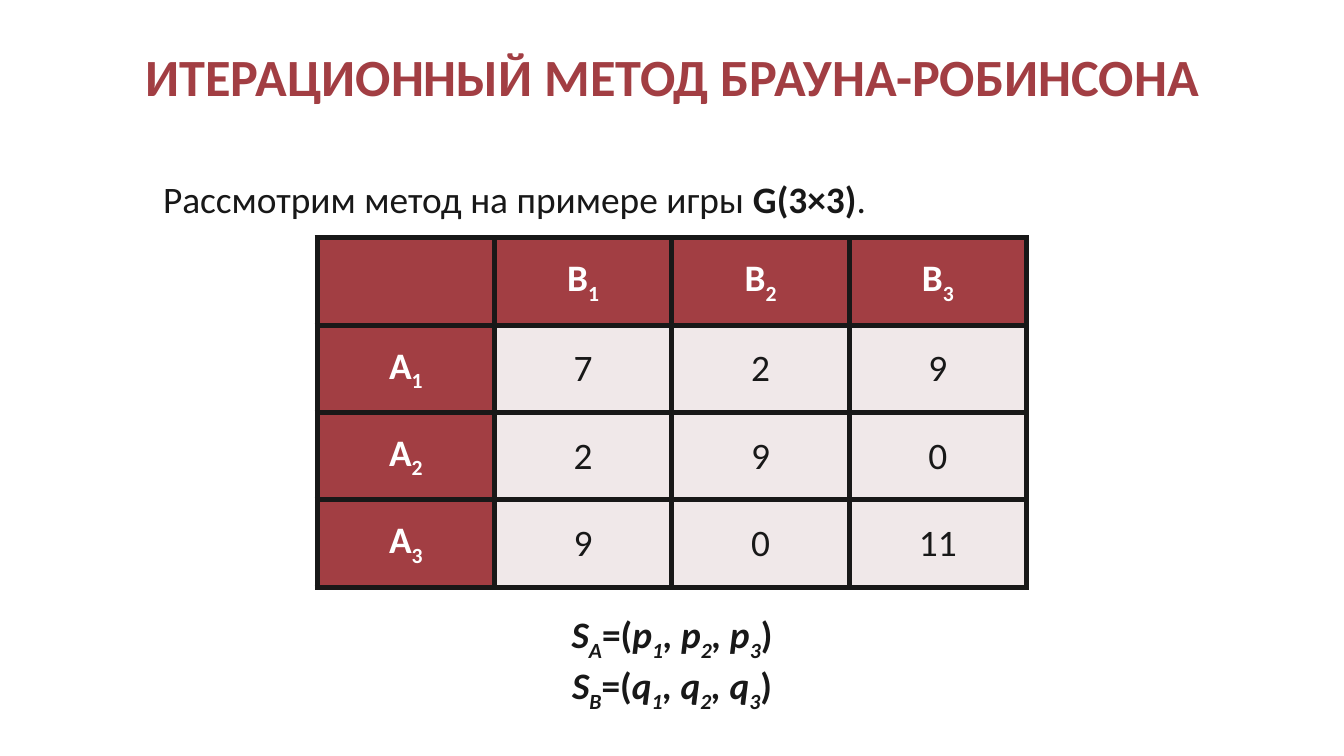
"""Build a slide on the Brown-Robinson iterative method."""
from lxml.etree import SubElement
from pptx import Presentation
from pptx.dml.color import RGBColor as Color
from pptx.enum.text import MSO_ANCHOR as Anchor, MSO_AUTO_SIZE as AutoSize, PP_ALIGN as Align
from pptx.oxml.ns import qn
from pptx.util import Inches, Pt

COLORS = {"accent": "A23E43", "dark": "181818", "light": "FFFFFF", "cell": "F0E8E9"}
WIDTH = 10
HEIGHT = WIDTH * 9 / 16
COLUMN, ROW = 1.32, 0.65
PAYOFFS = [[7, 2, 9], [2, 9, 0], [9, 0, 11]]


def color(name):
    """Return the named colour."""
    return Color.from_string(COLORS[name])


def place(shape, top, width, height):
    """Centre a shape on the slide at a given top."""
    shape.left, shape.top = Inches((WIDTH - width) / 2), Inches(top)
    shape.width, shape.height = Inches(width), Inches(height)


def write(paragraph, runs, size=20, tint="dark", align=Align.CENTER):
    """Write (text, style) runs; b is bold, i is italic, _ is subscript."""
    paragraph.alignment = align
    for text, style in runs:
        run = paragraph.add_run()
        run.text = text
        font = run.font
        font.name, font.size = "Calibri", Pt(size)
        font.bold, font.italic = "b" in style, "i" in style
        font.color.rgb = color(tint)
        if "_" in style:
            font._element.set("baseline", "-25000")


def add_text(slide, lines, top, width, height, anchor=Anchor.TOP, **style):
    """Add a centred text box with one paragraph per line."""
    box = slide.shapes.add_textbox(0, 0, 0, 0)
    place(box, top, width, height)
    frame = box.text_frame
    frame.word_wrap, frame.auto_size = True, AutoSize.SHAPE_TO_FIT_TEXT
    frame.vertical_anchor = anchor
    for index, runs in enumerate(lines):
        paragraph = frame.add_paragraph() if index else frame.paragraphs[0]
        write(paragraph, runs, **style)


def add_borders(cell, width=3):
    """Draw all four borders of a cell."""
    properties = cell._tc.get_or_add_tcPr()
    for side in ("lnL", "lnR", "lnT", "lnB"):
        line = SubElement(properties, qn(f"a:{side}"), w=str(Pt(width)))
        fill = SubElement(line, qn("a:solidFill"))
        SubElement(fill, qn("a:srgbClr"), val=COLORS["dark"])


def format_cell(cell, runs, header):
    """Fill, frame and write one cell."""
    add_borders(cell)
    cell.fill.solid()
    cell.fill.fore_color.rgb = color("accent" if header else "cell")
    cell.vertical_anchor = Anchor.MIDDLE
    cell.margin_left = cell.margin_right = Inches(0.07)
    cell.margin_top = cell.margin_bottom = 0
    write(cell.text_frame.paragraphs[0], runs, tint="light" if header else "dark")


def add_payoff_table(slide, payoffs, top):
    """Add the payoff matrix with strategy headers."""
    rows, columns = len(payoffs) + 1, len(payoffs[0]) + 1
    width, height = columns * COLUMN, rows * ROW
    frame = slide.shapes.add_table(rows, columns, 0, 0, Inches(width), Inches(height))
    place(frame, top, width, height)
    for row in range(rows):
        for column in range(columns):
            if row and column:
                runs = [(str(payoffs[row - 1][column - 1]), "")]
            elif row or column:
                runs = [("A" if row else "B", "b"), (str(row or column), "b_")]
            else:
                runs = []
            format_cell(frame.table.cell(row, column), runs, not (row and column))


def strategy(player, symbol, count=3):
    """Return the runs of a mixed strategy vector."""
    runs = [("S", "bi"), (player, "bi_"), ("=(", "b")]
    for index in range(1, count + 1):
        runs += [(symbol if index == 1 else f", {symbol}", "bi"), (str(index), "bi_")]
    return runs + [(")", "b")]


def main():
    """Build and save the slide."""
    presentation = Presentation()
    presentation.slide_width, presentation.slide_height = Inches(WIDTH), Inches(HEIGHT)
    slide = presentation.slides.add_slide(presentation.slide_layouts[5])
    title = slide.shapes.title
    place(title, 0.21, 9.78, 0.7)
    title.text_frame.vertical_anchor = Anchor.MIDDLE
    write(title.text_frame.paragraphs[0],
          [("ИТЕРАЦИОННЫЙ МЕТОД БРАУНА-РОБИНСОНА", "b")], size=28, tint="accent")
    intro = [("Рассмотрим метод на примере игры ", ""), ("G(3×3)", "b"), (".", "")]
    add_text(slide, [intro], 1.26, 7.77, 0.44, anchor=Anchor.MIDDLE, align=Align.JUSTIFY)
    add_payoff_table(slide, PAYOFFS, 1.77)
    add_text(slide, [strategy("A", "p"), strategy("B", "q")], 4.5, 2.68, 0.77)
    presentation.save("out.pptx")


if __name__ == "__main__":
    main()
